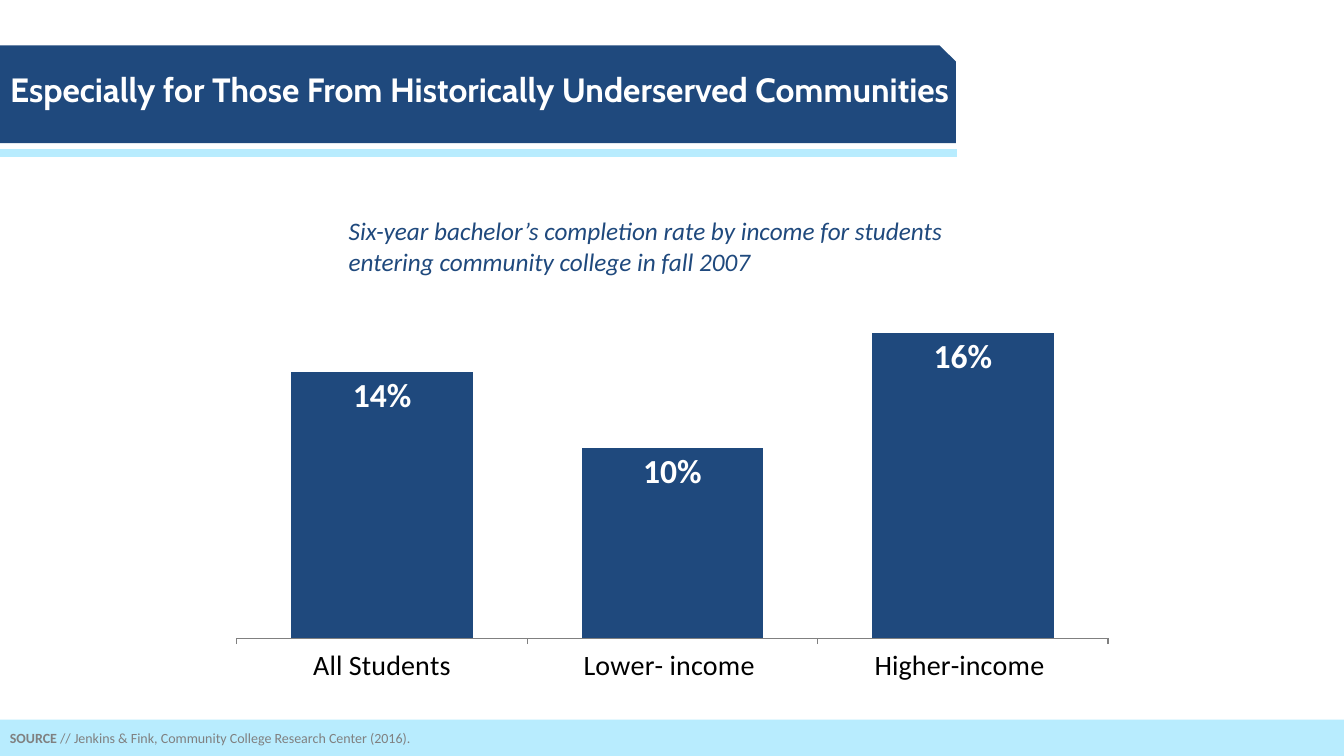
import pptx
import pptx.chart.data
import pptx.dml.color
import pptx.enum.chart
import pptx.enum.shapes
import pptx.enum.text
import pptx.oxml
import pptx.oxml.ns
import pptx.util
from dataclasses import dataclass
from typing import NamedTuple

# Slide grid: square cells
COLUMNS, ROWS = 133.3, 75
CELL = pptx.util.Inches(0.1)


@dataclass(frozen=True)
class Theme:
    navy: str = "1F497D"
    sky: str = "B8ECFE"
    white: str = "FFFFFF"
    black: str = "000000"
    grey: str = "808080"
    heading_font: str = "Cabin"
    body_font: str = "Calibri"
    heading_size: int = 24
    label_size: int = 24
    category_size: int = 20
    body_size: int = 18
    source_size: int = 10
    rule_width: int = 6


THEME = Theme()


class Box(NamedTuple):
    left: float
    top: float
    width: float
    height: float

    def inner(self, left, top, width, height):
        """A box whose corner is counted from this box's corner."""
        return Box(self.left + left, self.top + top, width, height)

    def lengths(self):
        return [round(cells * CELL) for cells in self]


def color(code):
    return pptx.dml.color.RGBColor.from_string(code)


def set_font(font, code, **formats):
    font.color.rgb = color(code)
    for name, value in formats.items():
        setattr(font, name, pptx.util.Pt(value) if name == "size" else value)


def add_panel(page, kind, box, code):
    panel = page.shapes.add_shape(kind, *box.lengths())
    panel.shadow.inherit = False
    panel.fill.solid()
    panel.fill.fore_color.rgb = color(code)
    panel.line.fill.background()
    return panel


def write(holder, spans, code, **formats):
    """Fill a text holder with (text, own formats) spans on one paragraph."""
    frame = holder.text_frame
    settings = {
        "word_wrap": True,
        "auto_size": pptx.enum.text.MSO_AUTO_SIZE.NONE,
        "vertical_anchor": pptx.enum.text.MSO_ANCHOR.TOP,
    }
    for name, value in settings.items():
        setattr(frame, name, value)
    para = frame.paragraphs[0]
    para.alignment = pptx.enum.text.PP_ALIGN.LEFT
    for text, own_formats in spans:
        span = para.add_run()
        span.text = text
        set_font(span.font, code, **{**formats, **own_formats})


def add_header(page, box):
    # Banner, placed behind the title
    banner = add_panel(page, pptx.enum.shapes.MSO_SHAPE.SNIP_1_RECTANGLE,
                       box.inner(-0.1, 0, box.width, 9.7), THEME.navy)
    title = page.shapes.title
    title.element.addprevious(banner.element)

    # Title
    place = box.inner(0, 1.8, 100.7, 5).lengths()
    for name, value in zip(("left", "top", "width", "height"), place):
        setattr(title, name, value)
    write(title, [("Especially for Those From Historically Underserved Communities", {})],
          THEME.white, name=THEME.heading_font, size=THEME.heading_size, bold=True)

    # Rule under the banner
    left, top, width, _ = box.inner(0, 10.7, box.width, 0).lengths()
    rule = page.shapes.add_connector(
        pptx.enum.shapes.MSO_CONNECTOR.STRAIGHT, left, top, left + width, top)
    rule.line.color.rgb = color(THEME.sky)
    rule.line.width = pptx.util.Pt(THEME.rule_width)
    rule.element.spPr.append(pptx.oxml.parse_xml(
        f"<a:effectLst {pptx.oxml.ns.nsdecls('a')}/>"))


def fix_plot_area(chart, **shares):
    """Hold the inner plot area at the given shares of the chart."""
    values = "".join(f'<c:{name} val="{share}"/>' for name, share in shares.items())
    layout = pptx.oxml.parse_xml(
        f"<c:layout {pptx.oxml.ns.nsdecls('c')}><c:manualLayout>"
        '<c:layoutTarget val="inner"/><c:xMode val="edge"/><c:yMode val="edge"/>'
        f"{values}</c:manualLayout></c:layout>")
    plot_area = chart.element.find(".//" + pptx.oxml.ns.qn("c:plotArea"))
    for old_layout in plot_area.findall(pptx.oxml.ns.qn("c:layout")):
        plot_area.remove(old_layout)
    plot_area.insert(0, layout)


def add_completion_chart(page, box):
    enums = pptx.enum.chart
    data = pptx.chart.data.CategoryChartData(number_format="0%")
    data.categories = ["All Students", "Lower- income ", "Higher-income "]
    data.add_series("Series 1", [0.14, 0.1, 0.16])
    chart = page.shapes.add_chart(
        enums.XL_CHART_TYPE.COLUMN_CLUSTERED, *box.lengths(), data).chart
    chart.has_legend = chart.has_title = False
    set_font(chart.font, THEME.black, name=THEME.body_font, size=THEME.body_size)
    fix_plot_area(chart, x=0.02, y=0.02, w=0.96, h=0.88)

    # Axes
    value_axis = chart.value_axis
    settings = {"visible": False, "has_major_gridlines": False,
                "minimum_scale": 0, "maximum_scale": 0.25, "major_unit": 0.25}
    for name, value in settings.items():
        setattr(value_axis, name, value)
    category_axis = chart.category_axis
    category_axis.major_tick_mark = enums.XL_TICK_MARK.OUTSIDE
    category_axis.format.line.color.rgb = color(THEME.grey)
    set_font(category_axis.tick_labels.font, THEME.black, size=THEME.category_size)

    # Columns and their labels
    plot = chart.plots[0]
    plot.gap_width = 60
    plot.vary_by_categories = False
    columns = plot.series[0]
    columns.format.fill.solid()
    columns.format.fill.fore_color.rgb = color(THEME.navy)
    labels = columns.data_labels
    settings = {"show_value": True, "number_format": "0%",
                "number_format_is_linked": False,
                "position": enums.XL_LABEL_POSITION.INSIDE_END}
    for name, value in settings.items():
        setattr(labels, name, value)
    set_font(labels.font, THEME.white, name=THEME.body_font,
             size=THEME.label_size, bold=True)


def add_body(page, box):
    add_completion_chart(page, box)
    caption = page.shapes.add_textbox(*box.inner(11.9, 5.9, 69.2, 7.1).lengths())
    write(caption, [("Six-year bachelor’s completion rate by income for students "
                     "entering community college in fall 2007", {})],
          THEME.navy, name=THEME.body_font, size=THEME.body_size, italic=True)


def add_footer(page, box):
    add_panel(page, pptx.enum.shapes.MSO_SHAPE.RECTANGLE, box, THEME.sky)
    source = page.shapes.add_textbox(*box.inner(0, 0.5, 82.3, 2.7).lengths())
    write(source, [("SOURCE ", {"bold": True}),
                   ("// Jenkins & Fink, Community College Research Center (2016).", {})],
          THEME.grey, name=THEME.body_font, size=THEME.source_size)


def main():
    deck = pptx.Presentation()
    deck.slide_width, deck.slide_height = round(COLUMNS * CELL), ROWS * CELL
    page = deck.slides.add_slide(deck.slide_layouts.get_by_name("Title Only"))
    add_header(page, Box(0, 4.5, 94.9, 11))
    add_body(page, Box(21.7, 15, 90, 53.7))
    add_footer(page, Box(0, ROWS - 3.6, COLUMNS, 3.6))
    deck.save("out.pptx")


if __name__ == "__main__":
    main()
